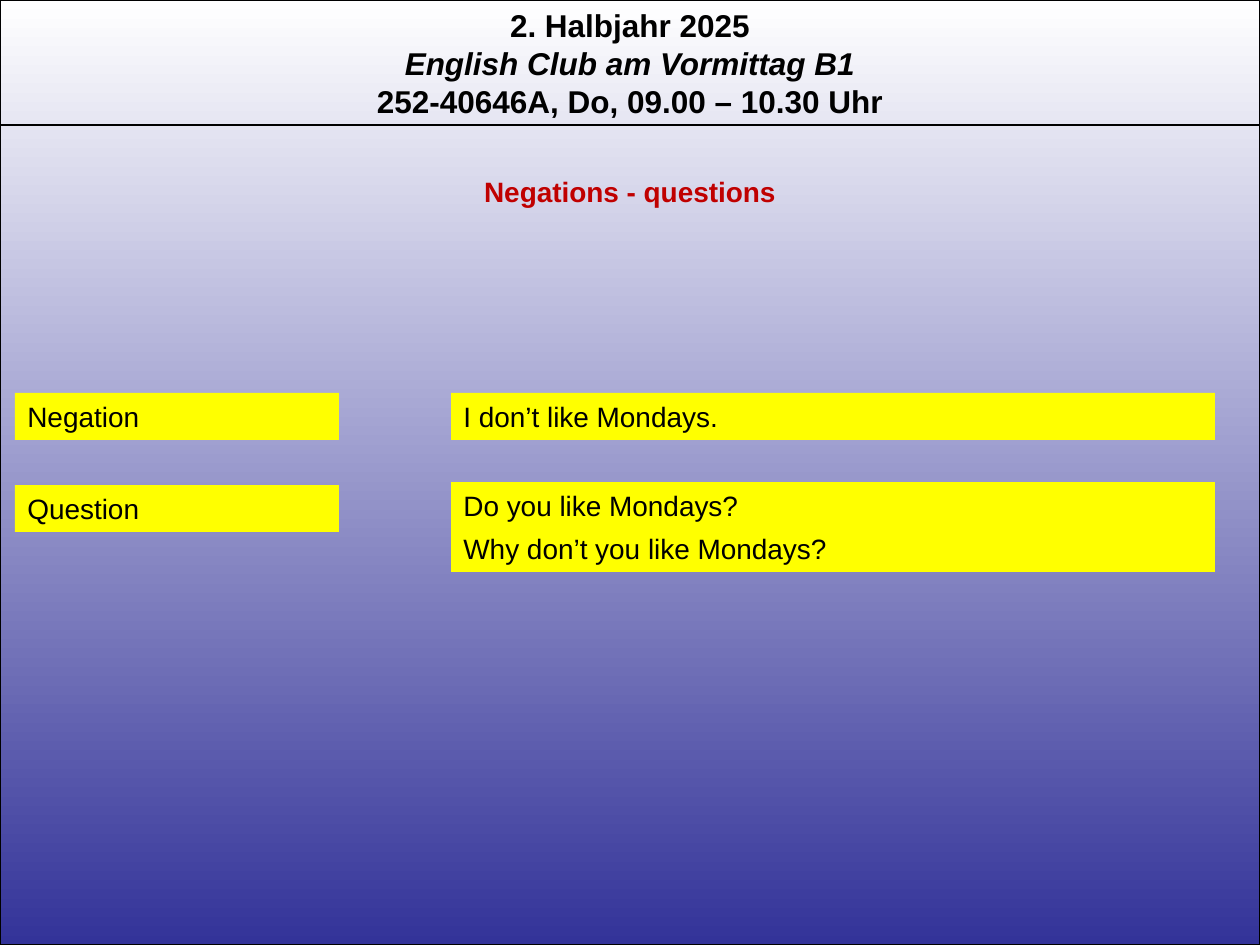
from dataclasses import dataclass

import pptx
import pptx.dml.color
import pptx.enum.shapes
import pptx.enum.text
import pptx.util
from lxml import etree

PX_PER_INCH = 126
PAGE_WIDTH, PAGE_HEIGHT = 1260, 945
RULE_TOP = 125
BOX_HEIGHT = 47
LABEL_LEFT, LABEL_WIDTH = 15, 324
EXAMPLE_LEFT, EXAMPLE_WIDTH = 451, 764


@dataclass(frozen=True)
class Theme:
    font: str = "Arial"
    ink: str = "000000"
    heading: str = "C00000"
    highlight: str = "FFFF00"
    sky_top: str = "FFFFFF"
    sky_bottom: str = "333399"
    header_size: int = 18
    body_size: int = 16
    line_width: float = 0.75


@dataclass(frozen=True)
class TextBlock:
    text: str
    left: int
    top: int
    width: int
    height: int = BOX_HEIGHT
    size: int = Theme.body_size
    color: str = Theme.ink
    bold: bool = False
    centred: bool = False
    italic_line: int = -1


THEME = Theme()

HEADER = TextBlock(
    "2. Halbjahr 2025\nEnglish Club am Vormittag B1\n252-40646A, Do, 09.00 – 10.30 Uhr",
    0, 0, PAGE_WIDTH, 127, THEME.header_size, bold=True, centred=True, italic_line=1,
)
HEADING = TextBlock(
    "Negations - questions", 0, 168, PAGE_WIDTH,
    color=THEME.heading, bold=True, centred=True,
)
HIGHLIGHTS = [
    TextBlock("Negation", LABEL_LEFT, 393, LABEL_WIDTH),
    TextBlock("I don’t like Mondays.", EXAMPLE_LEFT, 393, EXAMPLE_WIDTH),
    TextBlock("Question", LABEL_LEFT, 485, LABEL_WIDTH),
    TextBlock("Do you like Mondays?", EXAMPLE_LEFT, 482, EXAMPLE_WIDTH),
    TextBlock("Why don’t you like Mondays?", EXAMPLE_LEFT, 525, EXAMPLE_WIDTH),
]


def px(length: int) -> pptx.util.Emu:
    return pptx.util.Emu(round(length * 914400 / PX_PER_INCH))


def rgb(value: str) -> pptx.dml.color.RGBColor:
    return pptx.dml.color.RGBColor.from_string(value)


def style_line(line) -> None:
    line.color.rgb = rgb(THEME.ink)
    line.width = pptx.util.Pt(THEME.line_width)


def add_rectangle(page, left: int, top: int, width: int, height: int):
    box = page.shapes.add_shape(
        pptx.enum.shapes.MSO_SHAPE.RECTANGLE, px(left), px(top), px(width), px(height)
    )
    box.shadow.inherit = False
    return box


def add_backdrop(page) -> None:
    box = add_rectangle(page, 0, 0, PAGE_WIDTH, PAGE_HEIGHT)
    box.fill.gradient()
    box.fill.gradient_angle = 270
    for stop, color in zip(box.fill.gradient_stops, (THEME.sky_top, THEME.sky_bottom)):
        stop.color.rgb = rgb(color)
    style_line(box.line)


def add_rule(page) -> None:
    rule = page.shapes.add_connector(
        pptx.enum.shapes.MSO_CONNECTOR.STRAIGHT,
        px(0), px(RULE_TOP), px(PAGE_WIDTH), px(RULE_TOP),
    )
    style_line(rule.line)
    etree.SubElement(rule.element.spPr, pptx.oxml.ns.qn("a:effectLst"))


def write_text(box, block: TextBlock) -> None:
    frame = box.text_frame
    frame.text = block.text
    frame.word_wrap = True
    frame.auto_size = pptx.enum.text.MSO_AUTO_SIZE.SHAPE_TO_FIT_TEXT
    frame.vertical_anchor = pptx.enum.text.MSO_ANCHOR.TOP
    align = pptx.enum.text.PP_ALIGN
    for index, paragraph in enumerate(frame.paragraphs):
        paragraph.alignment = align.CENTER if block.centred else align.LEFT
        for span in paragraph.runs:
            span.font.name = THEME.font
            span.font.size = pptx.util.Pt(block.size)
            span.font.bold = block.bold
            span.font.italic = index == block.italic_line
            span.font.color.rgb = rgb(block.color)


def add_text(page, block: TextBlock) -> None:
    box = page.shapes.add_textbox(
        px(block.left), px(block.top), px(block.width), px(block.height)
    )
    write_text(box, block)


def add_highlight(page, block: TextBlock) -> None:
    box = add_rectangle(page, block.left, block.top, block.width, block.height)
    box.fill.solid()
    box.fill.fore_color.rgb = rgb(THEME.highlight)
    box.line.fill.background()
    write_text(box, block)


def main() -> None:
    deck = pptx.Presentation()
    deck.slide_width, deck.slide_height = px(PAGE_WIDTH), px(PAGE_HEIGHT)
    page = deck.slides.add_slide(deck.slide_layouts[6])
    add_backdrop(page)
    add_text(page, HEADER)
    add_rule(page)
    add_text(page, HEADING)
    for block in HIGHLIGHTS:
        add_highlight(page, block)
    deck.save("out.pptx")


if __name__ == "__main__":
    main()
